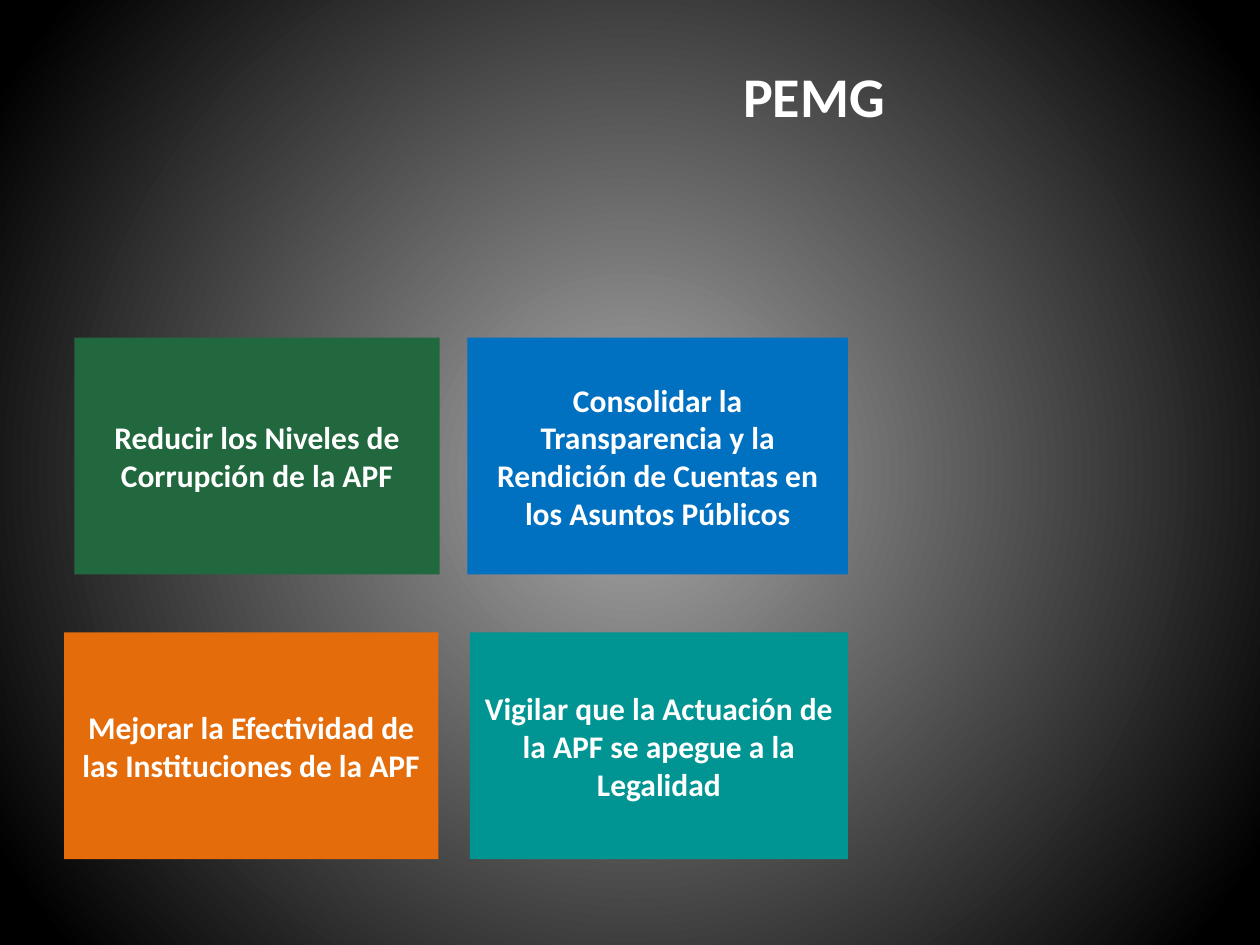
from pptx import Presentation
from pptx.dml.color import RGBColor
from pptx.enum.shapes import MSO_SHAPE as Shape
from pptx.enum.text import MSO_ANCHOR as Anchor, PP_ALIGN as Align
from pptx.oxml.ns import qn
from pptx.util import Inches, Pt
from lxml.etree import SubElement

HUES = {
    "white": "FFFFFF", "gray": "A6A6A6", "black": "000000",
    "orange": "E46C0A", "green": "22683E", "blue": "0070C0", "teal": "009592",
}
ROWS = {"top": (26.8, 18.8), "low": (50.2, 18)}
GOALS = [
    ("low", 5.1, 29.7, "orange", "Mejorar la Efectividad de las Instituciones de la APF"),
    ("top", 5.9, 29, "green", "Reducir los Niveles de Corrupción de la APF"),
    ("top", 37.1, 30.2, "blue",
     "Consolidar la Transparencia y la Rendición de Cuentas en los Asuntos Públicos"),
    ("low", 37.3, 30, "teal", "Vigilar que la Actuación de la APF se apegue a la Legalidad"),
]


class Deck:
    font = "Calibri"
    cols, rows = 100, 75

    def __init__(self):
        self.file = Presentation()
        self.file.slide_width, self.file.slide_height = Inches(10), Inches(7.5)
        self.slide = self.file.slides.add_slide(self.file.slide_layouts[5])

    def hue(self, name):
        return RGBColor.from_string(HUES[name])

    def area(self, col, row, wide, high):
        unit_x = self.file.slide_width / self.cols
        unit_y = self.file.slide_height / self.rows
        return [round(n) for n in (col * unit_x, row * unit_y, wide * unit_x, high * unit_y)]

    def glow(self, stops):
        fill = self.slide.background.fill
        fill.gradient()
        for stop, (place, name) in zip(fill.gradient_stops, stops):
            stop.position = place
            stop.color.rgb = self.hue(name)
        grad = self.slide.element.find(".//" + qn("a:gradFill"))
        grad.remove(grad.find(qn("a:lin")))
        ring = SubElement(grad, qn("a:path"), path="circle")
        SubElement(ring, qn("a:fillToRect"), l="50000", t="50000", r="50000", b="50000")

    def label(self, shape, text, size):
        frame = shape.text_frame
        frame.text = text
        frame.word_wrap = True
        frame.vertical_anchor = Anchor.MIDDLE
        line = frame.paragraphs[0]
        line.alignment = Align.CENTER
        font = line.runs[0].font
        font.name, font.size, font.bold = self.font, Pt(size), True
        font.color.rgb = self.hue("white")

    def title(self, text, *spot):
        head = self.slide.shapes.title
        head.left, head.top, head.width, head.height = self.area(*spot)
        self.label(head, text, 32)

    def box(self, text, hue, *spot):
        card = self.slide.shapes.add_shape(Shape.RECTANGLE, *self.area(*spot))
        card.shadow.inherit = False
        card.fill.solid()
        card.fill.fore_color.rgb = self.hue(hue)
        card.line.fill.background()
        self.label(card, text, 18)


def main():
    deck = Deck()
    deck.glow([(0.02, "gray"), (0.94, "black")])
    for row, col, wide, hue, text in GOALS:
        top, high = ROWS[row]
        deck.box(text, hue, col, top, wide, high)
    deck.title("PEMG", 32.7, 3.8, 63.8, 7.5)
    deck.file.save("out.pptx")


if __name__ == "__main__":
    main()
